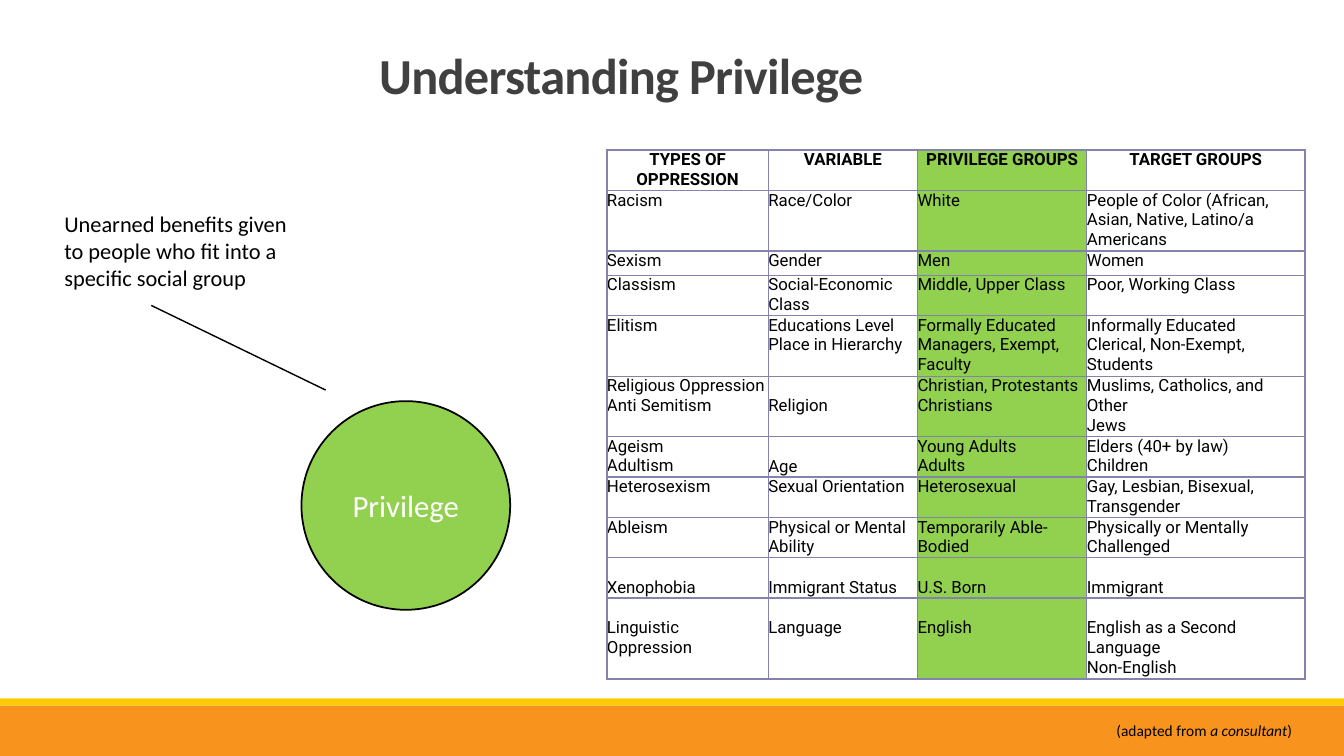
import pptx
import pptx.dml.color
import pptx.enum.shapes
import pptx.enum.text
import pptx.oxml
import pptx.oxml.ns
import pptx.util

Inches = pptx.util.Inches
Pt = pptx.util.Pt
ALIGN = pptx.enum.text.PP_ALIGN
ANCHOR = pptx.enum.text.MSO_ANCHOR
SHAPE = pptx.enum.shapes.MSO_SHAPE

BLACK, WHITE, GRAY = "000000", "FFFFFF", "404040"
GREEN, ORANGE, YELLOW, LAVENDER = "92D050", "F8931D", "FFCA08", "8383AD"
PRIVILEGE_COLUMN = 2
LINE_GAP = 0.2

COLUMN_WIDTHS = [1.6, 1.48, 1.68, 2.16]
ROW_HEIGHTS = [0.4, 0.6, 0.24, 0.4, 0.6, 0.6, 0.4, 0.4, 0.4, 0.4, 0.8]
HEADINGS = ["TYPES OF OPPRESSION", "VARIABLE", "PRIVILEGE GROUPS", "TARGET GROUPS"]
OPPRESSIONS = [
    ["Racism", "Race/Color", "White",
     "People of Color (African, Asian, Native, Latino/a Americans"],
    ["Sexism", "Gender", "Men", "Women"],
    ["Classism", "Social-Economic Class", "Middle, Upper Class", "Poor, Working Class"],
    ["Elitism", "Educations Level\nPlace in Hierarchy",
     "Formally Educated\nManagers, Exempt, Faculty",
     "Informally Educated\nClerical, Non-Exempt, Students"],
    ["Religious Oppression\nAnti Semitism", "Religion",
     "Christian, Protestants\nChristians", "Muslims, Catholics, and Other\nJews"],
    ["Ageism\nAdultism", "Age", "Young Adults\nAdults", "Elders (40+ by law)\nChildren"],
    ["Heterosexism", "Sexual Orientation", "Heterosexual",
     "Gay, Lesbian, Bisexual, Transgender"],
    ["Ableism", "Physical or Mental Ability", "Temporarily Able-Bodied",
     "Physically or Mentally Challenged"],
    ["Xenophobia", "Immigrant Status", "U.S. Born", "Immigrant"],
    ["Linguistic Oppression", "Language", "English",
     "English as a Second Language\nNon-English"],
]
# Cells whose text starts one line down
LOWERED_CELLS = {(5, 1), (6, 1)} | {(row, col) for row in (9, 10) for col in range(4)}


def rgb(hex_color):
    return pptx.dml.color.RGBColor.from_string(hex_color)


def apply_format(target, values):
    for name, value in values.items():
        setattr(target, name, value)


def add_run(paragraph, text, color, **font_values):
    run = paragraph.add_run()
    run.text = text
    apply_format(run.font, {"name": "Calibri", **font_values})
    run.font.color.rgb = rgb(color)
    return run


def add_text_box(slide, box, **frame_values):
    """Add a wrapping text box and return its first paragraph."""
    frame = slide.shapes.add_textbox(*map(Inches, box)).text_frame
    apply_format(frame, {"word_wrap": True, **frame_values})
    return frame.paragraphs[0]


def add_filled_shape(slide, preset, box, fill, line_width=None):
    shape = slide.shapes.add_shape(preset, *map(Inches, box))
    shape.shadow.inherit = False
    shape.fill.solid()
    shape.fill.fore_color.rgb = rgb(fill)
    if line_width:
        shape.line.color.rgb = rgb(BLACK)
        shape.line.width = Pt(line_width)
    else:
        shape.line.fill.background()
    return shape


def add_pointer(slide, start, end):
    pointer = slide.shapes.add_connector(
        pptx.enum.shapes.MSO_CONNECTOR.STRAIGHT, *map(Inches, start + end))
    pointer.line.color.rgb = rgb(BLACK)
    pointer.line.width = Pt(1)
    properties = pointer._element.spPr
    properties.append(properties.makeelement(pptx.oxml.ns.qn("a:effectLst"), {}))


def set_cell_borders(cell, widths):
    """Draw the borders; widths maps L, R, T and B to points."""
    properties = cell._tc.get_or_add_tcPr()
    for side, width in widths.items():
        properties.append(pptx.oxml.parse_xml(
            f'<a:ln{side} {pptx.oxml.ns.nsdecls("a")} w="{int(Pt(width))}">'
            f'<a:solidFill><a:srgbClr val="{LAVENDER}"/></a:solidFill></a:ln{side}>'))


def fill_cell(cell, row, col, text):
    last_row, last_col = len(ROW_HEIGHTS) - 1, len(COLUMN_WIDTHS) - 1
    on_edge = {"L": col == 0, "R": col == last_col, "T": row == 0, "B": row == last_row}
    set_cell_borders(cell, {side: 1.5 if edge else 1 for side, edge in on_edge.items()})
    if col == PRIVILEGE_COLUMN:
        cell.fill.solid()
        cell.fill.fore_color.rgb = rgb(GREEN)
    else:
        cell.fill.background()
    top = LINE_GAP if (row, col) in LOWERED_CELLS else 0
    apply_format(cell, {"margin_left": 0, "margin_right": 0,
                        "margin_top": Inches(top), "margin_bottom": 0})
    is_heading = row == 0
    for index, line in enumerate(text.split("\n")):
        frame = cell.text_frame
        paragraph = frame.add_paragraph() if index else frame.paragraphs[0]
        paragraph.alignment = ALIGN.CENTER if is_heading else ALIGN.LEFT
        add_run(paragraph, line, BLACK, name="Roboto", size=Pt(12), bold=is_heading)


def add_oppression_table(slide):
    rows = [HEADINGS] + OPPRESSIONS
    box = (6.02, 1.49, sum(COLUMN_WIDTHS), sum(ROW_HEIGHTS))
    table = slide.shapes.add_table(
        len(rows), len(HEADINGS), *map(Inches, box)).table
    apply_format(table, {"first_row": False, "horz_banding": False})
    for column, width in zip(table.columns, COLUMN_WIDTHS):
        column.width = Inches(width)
    for table_row, height in zip(table.rows, ROW_HEIGHTS):
        table_row.height = Inches(height)
    for row, texts in enumerate(rows):
        for col, text in enumerate(texts):
            fill_cell(table.cell(row, col), row, col, text)


def add_title(slide):
    title = add_text_box(slide, (2.37, 0.2, 7.58, 0.89), vertical_anchor=ANCHOR.BOTTOM)
    apply_format(title, {"alignment": ALIGN.CENTER, "line_spacing": 0.85})
    run = add_run(title, "Understanding Privilege", GRAY, size=Pt(36), bold=True)
    run._r.get_or_add_rPr().set("spc", "-50")


def add_privilege_circle(slide):
    circle = add_filled_shape(slide, SHAPE.OVAL, (2.99, 3.98, 2.07, 2.07), GREEN, 1.25)
    circle.text_frame.vertical_anchor = ANCHOR.MIDDLE
    label = circle.text_frame.paragraphs[0]
    label.alignment = ALIGN.CENTER
    add_run(label, "Privilege", WHITE, size=Pt(22))


def add_definition(slide):
    definition = add_text_box(slide, (0.54, 2.04, 2.45, 0.91))
    add_run(definition,
            "Unearned benefits given to people who fit into a specific social group",
            BLACK, size=Pt(16))
    add_pointer(slide, (1.5, 3.03), (3.23, 3.87))


def add_credit(slide):
    credit = add_text_box(slide, (10.94, 7.1, 2.18, 0.29))
    for text, italic in ((" (adapted from ", False), ("a consultant", True), (")", False)):
        add_run(credit, text, BLACK, size=Pt(11), italic=italic)


def main():
    deck = pptx.Presentation()
    apply_format(deck, {"slide_width": Inches(13.33), "slide_height": Inches(7.5)})
    slide = deck.slides.add_slide(deck.slide_layouts[6])
    add_filled_shape(slide, SHAPE.RECTANGLE, (0, 7, 13.33, 0.5), ORANGE)
    add_filled_shape(slide, SHAPE.RECTANGLE, (0, 6.93, 13.33, 0.07), YELLOW)
    add_title(slide)
    add_privilege_circle(slide)
    add_definition(slide)
    add_oppression_table(slide)
    add_credit(slide)
    deck.save("out.pptx")


if __name__ == "__main__":
    main()
